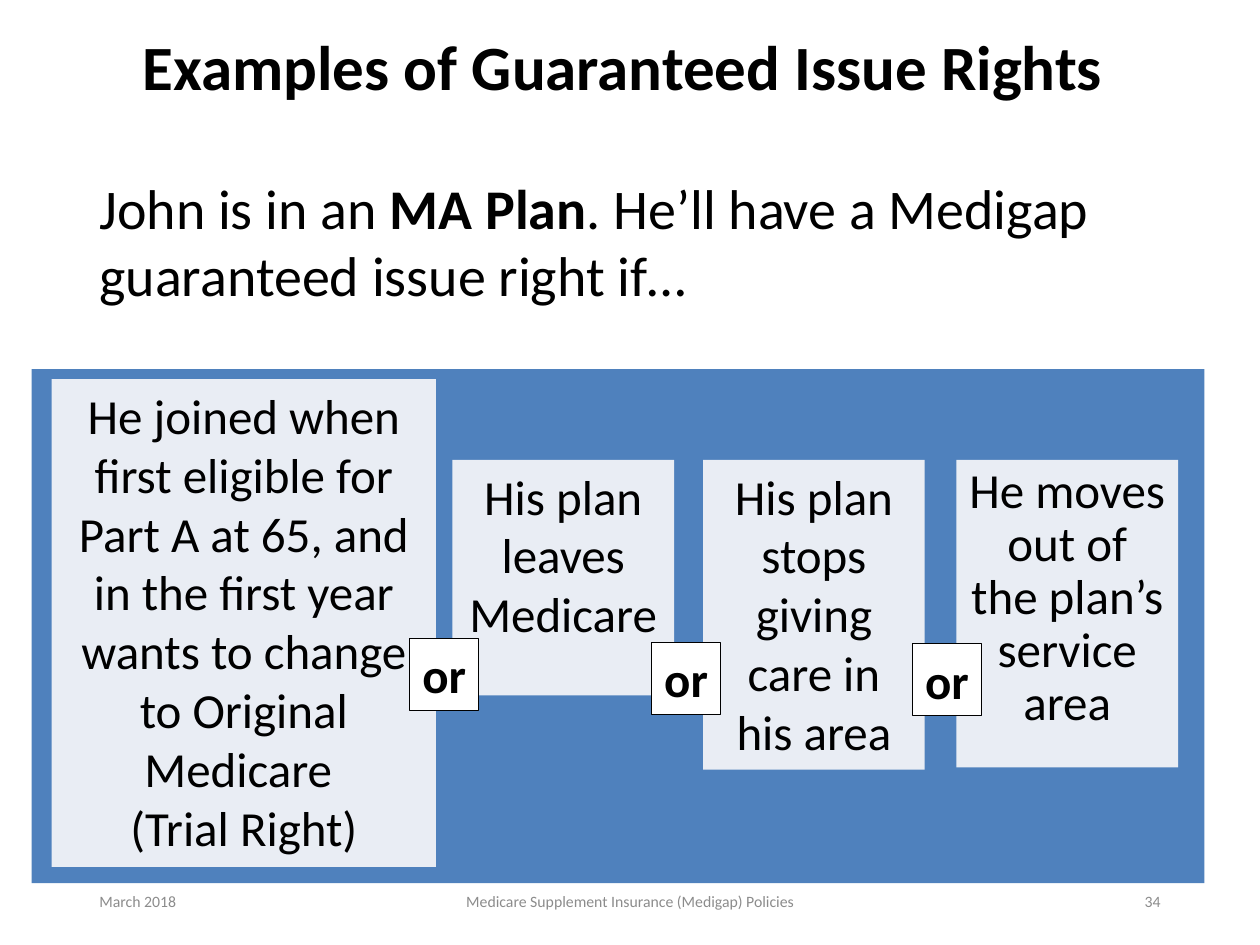
from pptx import Presentation, util as u
from pptx.dml.color import RGBColor
from pptx.enum import shapes, text

FONT, BLACK, GREY = "Calibri", "000000", "8C8C8C"
BLUE, PALE, WHITE = "4F81BD", "E9EDF4", "FFFFFF"
LEFT, CENTER, RIGHT = text.PP_ALIGN.LEFT, text.PP_ALIGN.CENTER, text.PP_ALIGN.RIGHT
TOP, MIDDLE = text.MSO_ANCHOR.TOP, text.MSO_ANCHOR.MIDDLE
CARD_TOP, CARD_W = 3.65, 1.76


def color(value):
    """Turn a hex string into a colour."""
    return RGBColor.from_string(value)


def box(*lengths):
    """Turn inches into lengths."""
    return [u.Inches(n) for n in lengths]


def write(sp, runs, size, align=LEFT, anchor=TOP, ink=BLACK, spacing=None, wrap=True):
    """Write one paragraph of (wording, bold) runs into a shape."""
    tf = sp.text_frame
    tf.word_wrap, tf.auto_size, tf.vertical_anchor = wrap, text.MSO_AUTO_SIZE.NONE, anchor
    p = tf.paragraphs[0]
    p.alignment = align
    if spacing:
        p.line_spacing = spacing
    for wording, bold in runs:
        for i, line in enumerate(wording.split("\n")):
            if i:
                p.add_line_break()
            r = p.add_run()
            r.text = line
            r.font.name, r.font.size, r.font.bold = FONT, u.Pt(size), bold
            r.font.color.rgb = color(ink)


def add_title(s, wording):
    """Place and fill the title placeholder."""
    sp = s.shapes.title
    sp.left, sp.top, sp.width, sp.height = box(0.69, 0, 8.62, 1.11)
    write(sp, [(wording, True)], 36, CENTER, MIDDLE, spacing=0.9)


def add_text(s, at, runs, size, **style):
    """Add a text box."""
    write(s.shapes.add_textbox(*box(*at)), runs, size, **style)


def add_rect(group, at, fill, outline=None):
    """Add a flat rectangle to a group."""
    sp = group.shapes.add_shape(shapes.MSO_SHAPE.RECTANGLE, *box(*at))
    sp.shadow.inherit = False
    sp.fill.solid()
    sp.fill.fore_color.rgb = color(fill)
    if outline:
        sp.line.color.rgb, sp.line.width = color(outline), u.Pt(0.5)
    else:
        sp.line.fill.background()
    return sp


def add_card(group, at, wording, spacing=None):
    """Add a pale card with one situation."""
    write(add_rect(group, at, PALE), [(wording, False)], 28, CENTER, spacing=spacing)


def add_or(group, left, top):
    """Add an outlined "or" tag between two cards."""
    sp = add_rect(group, (left, top, 0.55, 0.57), WHITE, BLACK)
    write(sp, [("or", True)], 28, CENTER, wrap=False)


def add_situations(s):
    """Add the blue panel with its cards and tags."""
    group = s.shapes.add_group_shape()
    add_rect(group, (0.25, 2.93, 9.31, 4.08), BLUE)
    add_card(group, (0.41, 3.01, 3.05, 3.87),
             "He joined when first eligible for Part A at 65, and in the first year "
             "wants to change to Original Medicare \n(Trial Right)")
    for left, height, wording, spacing in (
            (3.59, 1.87, "His plan leaves Medicare", None),
            (5.58, 2.46, "His plan stops giving care in his area", None),
            (7.59, 2.44, "He moves out of the plan’s service area", 0.9)):
        add_card(group, (left, CARD_TOP, CARD_W, height), wording, spacing)
    for left, top in ((3.25, 5.07), (5.17, 5.1), (7.24, 5.11)):
        add_or(group, left, top)


def add_footer(s):
    """Add the date, the footer and the slide number."""
    for left, width, align, wording in (
            (0.69, 2.25, LEFT, "March 2018"),
            (3.31, 3.38, CENTER, "Medicare Supplement Insurance (Medigap) Policies"),
            (7.06, 2.25, RIGHT, "34")):
        add_text(s, (left, 6.95, width, 0.4), [(wording, False)], 9,
                 align=align, anchor=MIDDLE, ink=GREY)


def main():
    """Build the slide and save it."""
    prs = Presentation()
    prs.slide_width, prs.slide_height = box(10, 7.5)
    s = prs.slides.add_slide(prs.slide_layouts[5])
    add_title(s, "Examples of Guaranteed Issue Rights ")
    add_text(s, (0.69, 1.33, 8.87, 1.65),
             [("John is in an ", False), ("MA Plan", True),
              (". He’ll have a Medigap guaranteed issue right if…", False)], 32)
    add_situations(s)
    add_footer(s)
    prs.save("out.pptx")


if __name__ == "__main__":
    main()
